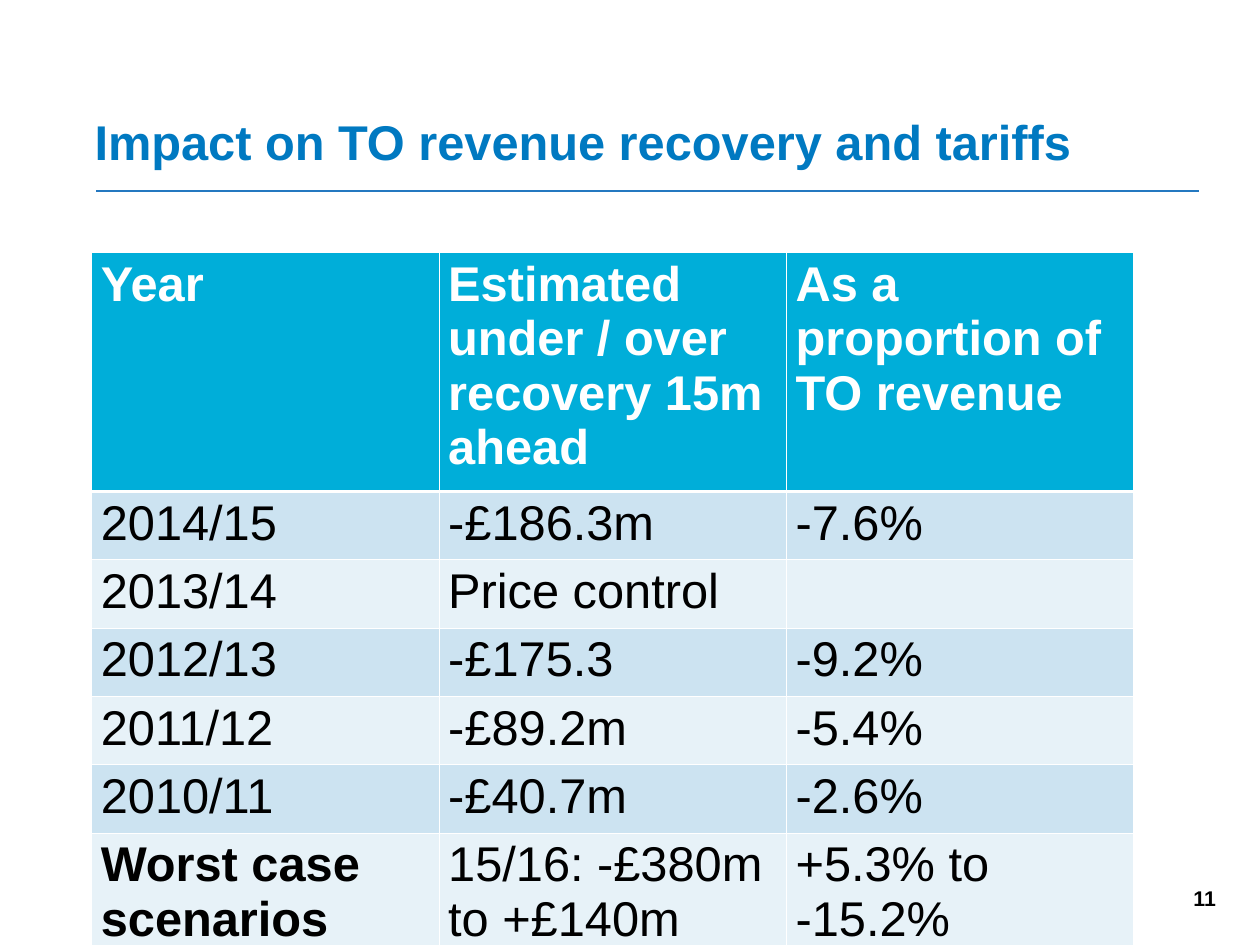
from lxml.etree import SubElement
from pptx import Presentation
from pptx.dml.color import RGBColor
from pptx.enum.shapes import MSO_CONNECTOR
from pptx.enum.text import MSO_ANCHOR, PP_ALIGN
from pptx.oxml.ns import qn
from pptx.util import Inches, Pt

WHITE = RGBColor(0xFF, 0xFF, 0xFF)
BLACK = RGBColor(0x00, 0x00, 0x00)
TITLE_BLUE = RGBColor(0x00, 0x79, 0xC1)
RULE_BLUE = RGBColor(0x24, 0x78, 0xC0)
HEADER_BLUE = RGBColor(0x00, 0xAE, 0xD9)
BANDS = (RGBColor(0xCC, 0xE3, 0xF1), RGBColor(0xE7, 0xF2, 0xF8))
FONT = "Arial"
TEXT_SIZE = 39

HEADER_HEIGHT = Inches(2.52)
YEAR_HEIGHT = Inches(0.76)
LAST_HEIGHT = Inches(1.3)

RECOVERY_ROWS = [
    ("Year", "Estimated under / over recovery 15m ahead",
     "As a proportion of TO revenue"),
    ("2014/15", "-£186.3m", "-7.6%"),
    ("2013/14", "Price control", ""),
    ("2012/13", "-£175.3", "-9.2%"),
    ("2011/12", "-£89.2m", "-5.4%"),
    ("2010/11", "-£40.7m", "-2.6%"),
    ("Worst case scenarios", "15/16: -£380m to +£140m", "+5.3% to -15.2%"),
]


def write_text(frame, text, size, color, bold, align=PP_ALIGN.LEFT):
    """Fill a text frame with one formatted paragraph."""
    frame.text = text
    para = frame.paragraphs[0]
    para.alignment = align
    for span in para.runs:
        span.font.name = FONT
        span.font.size = Pt(size)
        span.font.bold = bold
        span.font.color.rgb = color


def set_insets(frame):
    """Give a text frame the margins shared by the title and page number."""
    frame.margin_left = frame.margin_right = Inches(0.14)
    frame.margin_top = frame.margin_bottom = Inches(0.07)
    frame.word_wrap = True


def set_borders(cell, bottom_width):
    """Draw white borders round a table cell."""
    properties = cell._tc.get_or_add_tcPr()
    widths = {"a:lnL": 1, "a:lnR": 1, "a:lnT": 1, "a:lnB": bottom_width}
    for index, (tag, width) in enumerate(widths.items()):
        border = SubElement(properties, qn(tag), w=str(Pt(width)))
        fill = SubElement(border, qn("a:solidFill"))
        SubElement(fill, qn("a:srgbClr"), val=str(WHITE))
        properties.insert(index, border)


def place_title(page, left, top, width, height):
    """Place the slide title."""
    title = page.shapes.title
    title.left, title.top, title.width, title.height = left, top, width, height
    set_insets(title.text_frame)
    title.text_frame.vertical_anchor = MSO_ANCHOR.BOTTOM
    write_text(title.text_frame, "Impact on TO revenue recovery and tariffs",
               TEXT_SIZE, TITLE_BLUE, True)


def place_rule(page, left, top, width):
    """Draw the line below the title."""
    rule = page.shapes.add_connector(
        MSO_CONNECTOR.STRAIGHT, left, top, left + width, top)
    rule.line.color.rgb = RULE_BLUE
    rule.line.width = Pt(1.5)
    SubElement(rule._element.spPr, qn("a:effectLst"))


def place_page_number(page, left, top, width, height):
    """Place the page number."""
    box = page.shapes.add_textbox(left, top, width, height)
    set_insets(box.text_frame)
    write_text(box.text_frame, "11", 17, BLACK, True, PP_ALIGN.RIGHT)


def place_recovery_table(page, left, top, width):
    """Build the banded table of recovery by year."""
    row_count, column_count = len(RECOVERY_ROWS), len(RECOVERY_ROWS[0])
    heights = [HEADER_HEIGHT, *[YEAR_HEIGHT] * (row_count - 2), LAST_HEIGHT]
    table = page.shapes.add_table(row_count, column_count, left, top, width,
                                  sum(heights)).table
    for row_index, texts in enumerate(RECOVERY_ROWS):
        is_header = row_index == 0
        is_last = row_index == row_count - 1
        table.rows[row_index].height = heights[row_index]
        for column_index, text in enumerate(texts):
            cell = table.cell(row_index, column_index)
            cell.margin_bottom = Inches(0)
            cell.fill.solid()
            cell.fill.fore_color.rgb = (
                HEADER_BLUE if is_header else BANDS[(row_index - 1) % 2])
            set_borders(cell, 3 if is_header else 1)
            write_text(cell.text_frame, text, TEXT_SIZE,
                       WHITE if is_header else BLACK,
                       is_header or (is_last and column_index == 0))


def main():
    """Build and save the slide."""
    deck = Presentation()
    deck.slide_width, deck.slide_height = Inches(14), Inches(10.5)
    page = deck.slides.add_slide(deck.slide_layouts[5])
    place_rule(page, Inches(1.07), Inches(2.12), Inches(12.25))
    place_page_number(page, Inches(10.38), Inches(9.77), Inches(3.27), Inches(0.55))
    place_recovery_table(page, Inches(1.02), Inches(2.81), Inches(11.58))
    place_title(page, Inches(0.91), Inches(1.16), Inches(12.39), Inches(0.8))
    deck.save("out.pptx")


if __name__ == "__main__":
    main()
